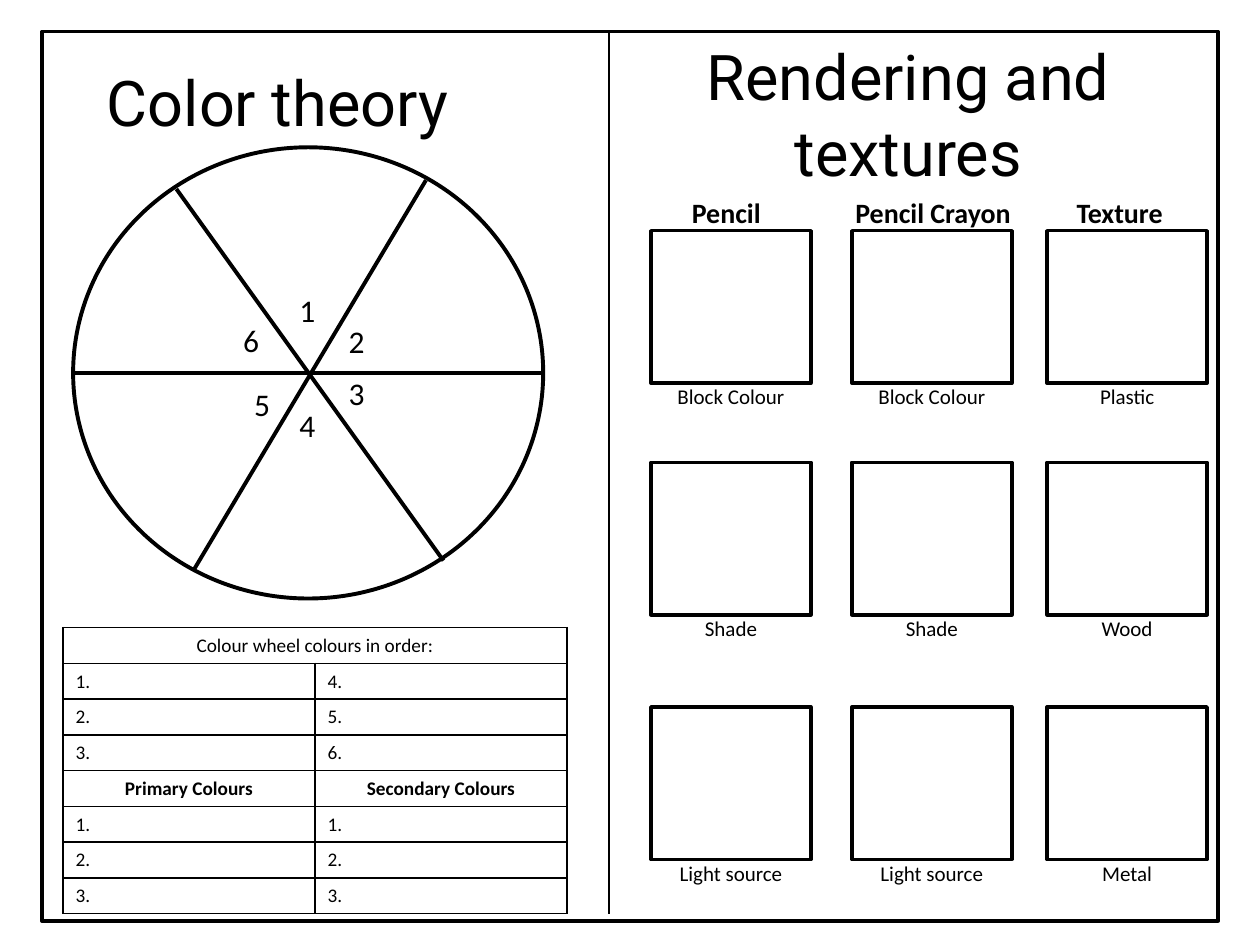
import pptx
import pptx.dml.color
import pptx.enum.shapes
import pptx.enum.text
import pptx.oxml.ns
import pptx.util
from dataclasses import dataclass
from lxml import etree

Pt = pptx.util.Pt
SHAPES = pptx.enum.shapes.MSO_SHAPE
ALIGN = pptx.enum.text.PP_ALIGN


@dataclass(frozen=True)
class Theme:
    ink: str = "000000"
    paper: str = "FFFFFF"
    title_font: str = "Roboto"
    body_font: str = "Calibri"
    title: float = 36
    number: float = 18
    heading: float = 16
    caption: float = 12
    table: float = 11
    heavy: float = 2.25
    outline: float = 2
    thin: float = 0.75
    border: float = 1


THEME = Theme()

# Content: lengths in points
TITLES = [  # text, left, top, width, height, alignment
    ("Color theory", 54, 33, 276.5, 51, ALIGN.LEFT),
    ("Rendering and textures", 348, 18, 342, 94.3, ALIGN.CENTER),
]
WHEEL = (41.8, 84.2, 268.6, 257.8)
SPOKES = [(41.8, 213.1, 310.4, 213.1), (110.9, 325.4, 243.4, 103),
          (253.4, 320.4, 100.8, 108)]
WHEEL_NUMBERS = [("1", 164, 162.7), ("2", 192.2, 180.7), ("3", 192.2, 210.2),
                 ("4", 164, 228.2), ("5", 138.2, 216.7), ("6", 131.8, 180)]
TABLE_ROWS = [
    ["Colour wheel colours in order:"],
    ["1.", "4."], ["2.", "5."], ["3.", "6."],
    ["Primary Colours", "Secondary Colours"],
    ["1.", "1."], ["2.", "2."], ["3.", "3."],
]
COLUMNS = [  # heading, heading centre, heading width, box left
    ("Pencil", 415, 54, 372),
    ("Pencil Crayon", 533.2, 104.4, 486.8),
    ("Texture", 639.8, 64, 598.4),
]
SAMPLE_ROWS = [  # box top, captions with their widths
    (131.8, [("Block Colour", 76.3), ("Block Colour", 76.3), ("Plastic", 46)]),
    (264.2, [("Shade", 44.6), ("Shade", 44.6), ("Wood", 44)]),
    (404, [("Light source", 74.2), ("Light source", 74.2), ("Metal", 43.2)]),
]
SAMPLE_WIDTH, SAMPLE_HEIGHT = 91.4, 87.1
CAPTION_RISE = 3  # how far a caption frame overlaps its box


def rgb(value):
    return pptx.dml.color.RGBColor.from_string(value)


def add_outline(shapes, kind, left, top, width, height, weight, filled=True):
    shape = shapes.add_shape(kind, Pt(left), Pt(top), Pt(width), Pt(height))
    shape.shadow.inherit = False
    if filled:
        shape.fill.solid()
        shape.fill.fore_color.rgb = rgb(THEME.paper)
    else:
        shape.fill.background()
    shape.line.color.rgb = rgb(THEME.ink)
    shape.line.width = Pt(weight)
    return shape


def add_line(shapes, ends, weight):
    line = shapes.add_connector(pptx.enum.shapes.MSO_CONNECTOR.STRAIGHT,
                                *(Pt(value) for value in ends))
    line.line.color.rgb = rgb(THEME.ink)
    line.line.width = Pt(weight)
    etree.SubElement(line._element.spPr, pptx.oxml.ns.qn("a:effectLst"))


def write(frame, text, size, font=THEME.body_font, align=ALIGN.LEFT, bold=False):
    para = frame.paragraphs[0]
    para.alignment = align
    span = para.add_run()
    span.text = text
    span.font.name = font
    span.font.size = Pt(size)
    span.font.bold = bold
    span.font.color.rgb = rgb(THEME.ink)


def add_text(page, text, left, top, width, height, size, wrap=False, **style):
    box = page.shapes.add_textbox(Pt(left), Pt(top), Pt(width), Pt(height))
    box.text_frame.word_wrap = wrap
    box.text_frame.auto_size = pptx.enum.text.MSO_AUTO_SIZE.SHAPE_TO_FIT_TEXT
    write(box.text_frame, text, size, **style)


def style_cell(cell):
    properties = cell._tc.get_or_add_tcPr()
    for side in ("a:lnL", "a:lnR", "a:lnT", "a:lnB"):
        border = etree.SubElement(properties, pptx.oxml.ns.qn(side),
                                  w=str(Pt(THEME.border)))
        fill = etree.SubElement(border, pptx.oxml.ns.qn("a:solidFill"))
        etree.SubElement(fill, pptx.oxml.ns.qn("a:srgbClr"), val=THEME.ink)
    cell.fill.solid()
    cell.fill.fore_color.rgb = rgb(THEME.paper)


def add_wheel(page):
    group = page.shapes.add_group_shape()
    add_outline(group.shapes, SHAPES.OVAL, *WHEEL, THEME.heavy)
    for spoke in SPOKES:
        add_line(group.shapes, spoke, THEME.heavy)
    for number, left, top in WHEEL_NUMBERS:
        add_text(page, number, left, top, 23.8, 29, THEME.number)


def add_colour_table(page):
    table = page.shapes.add_table(len(TABLE_ROWS), 2, Pt(36), Pt(358.6),
                                  Pt(288), Pt(163.2)).table
    table.first_row = table.horz_banding = False
    for row, texts in enumerate(TABLE_ROWS):
        table.rows[row].height = Pt(20.4)
        for column in range(2):
            style_cell(table.cell(row, column))
        if len(texts) == 1:
            table.cell(row, 0).merge(table.cell(row, 1))
        for column, text in enumerate(texts):
            numbered = text.endswith(".")
            write(table.cell(row, column).text_frame, text, THEME.table,
                  align=ALIGN.LEFT if numbered else ALIGN.CENTER,
                  bold=not numbered and len(texts) == 2)


def add_samples(page):
    for heading, centre, width, _ in COLUMNS:
        add_text(page, heading, centre - width / 2, 108, width, 26.6,
                 THEME.heading, align=ALIGN.CENTER, bold=True)
    for top, captions in SAMPLE_ROWS:
        for (_, _, _, left), (caption, width) in zip(COLUMNS, captions):
            box = add_outline(page.shapes, SHAPES.ROUNDED_RECTANGLE, left, top,
                              SAMPLE_WIDTH, SAMPLE_HEIGHT, THEME.outline)
            box.adjustments[0] = 0
            add_text(page, caption, left + (SAMPLE_WIDTH - width) / 2,
                     top + SAMPLE_HEIGHT - CAPTION_RISE, width, 21.8,
                     THEME.caption, align=ALIGN.CENTER)


def main():
    deck = pptx.Presentation()
    deck.slide_width, deck.slide_height = Pt(720), Pt(540)
    page = deck.slides.add_slide(deck.slide_layouts[6])

    # Page frame and the divider between the halves
    add_outline(page.shapes, SHAPES.RECTANGLE, 24, 18, 672, 508.3,
                THEME.outline, filled=False)
    add_line(page.shapes, (348, 18, 348, 522), THEME.thin)

    # Left half: colour wheel and table; right half: sample boxes
    add_wheel(page)
    add_colour_table(page)
    add_samples(page)
    for text, left, top, width, height, align in TITLES:
        add_text(page, text, left, top, width, height, THEME.title, wrap=True,
                 font=THEME.title_font, align=align)

    deck.save("out.pptx")


if __name__ == "__main__":
    main()
